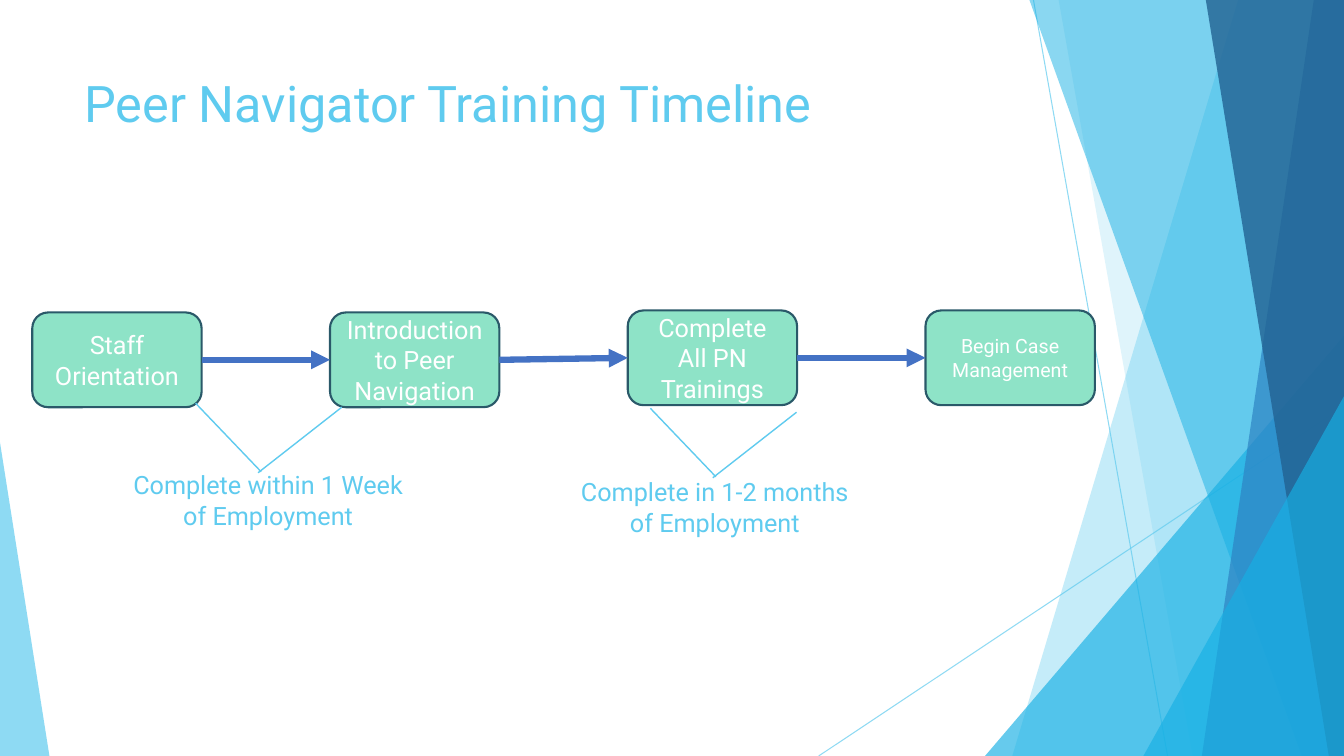
from lxml.etree import SubElement
from pptx import Presentation
from pptx.dml.color import RGBColor
from pptx.enum.shapes import MSO_CONNECTOR, MSO_SHAPE
from pptx.enum.text import MSO_ANCHOR, PP_ALIGN
from pptx.oxml.ns import qn
from pptx.util import Inches, Pt

SKY = RGBColor(0x5F, 0xCB, 0xEF)
CYAN = RGBColor(0x17, 0xB0, 0xE4)
BLUE = RGBColor(0x2E, 0x83, 0xC3)
NAVY = RGBColor(0x22, 0x62, 0x92)
MINT = RGBColor(0x8E, 0xE3, 0xC7)
TEAL = RGBColor(0x2A, 0x59, 0x69)
ROYAL = RGBColor(0x44, 0x72, 0xC4)
WHITE = RGBColor(0xFF, 0xFF, 0xFF)

FONT = "Roboto"
WIDE, HIGH = 13.33, 7.5

TITLE = "Peer Navigator Training Timeline"
STEPS = [
    ("Staff Orientation", 3.1, 18),
    ("Introduction to Peer Navigation", 3.1, 18),
    ("Complete All PN Trainings", 3.08, 18),
    ("Begin Case Management", 3.08, 14),
]
NOTES = [
    ("Complete within 1 Week of Employment", 1.16, 4.61, 1.94, 4.0),
    ("Complete in 1-2 months of Employment", 5.59, 4.68, 6.45, 4.05),
]
RAYS = [(10.25, 0, 11.58, HIGH), (WIDE, 4.03, 8.12, HIGH)]
DECOR = [
    ("band", (12.28, 10.04), SKY, 36),
    ("band", (10.5, 11.83), SKY, 20),
    ("peak", (9.77, 3.33, 3.56, 1), CYAN, 66),
    ("band", (10.21, 12.91), CYAN, 50),
    ("band", (13.03, 11.92), BLUE, 70),
    ("band", (11.96, 13.18), NAVY, 80),
    ("peak", (11.34, 3.93, 1.99, 1), CYAN, 66),
    ("peak", (0, 4.39, 0.49, 0), SKY, 70),
]
BOX_X, BOX_GAP, BOX_W, BOX_H = 0.32, 2.953, 1.68, 0.94

deck = Presentation()
deck.slide_width, deck.slide_height = Inches(WIDE), Inches(HIGH)
shapes = deck.slides.add_slide(deck.slide_layouts[6]).shapes


def fade(fill, alpha):
    color = fill.find(".//" + qn("a:srgbClr"))
    SubElement(color, qn("a:alpha")).set("val", str(alpha * 1000))


def add_line(x1, y1, x2, y2, color, width):
    line = shapes.add_connector(
        MSO_CONNECTOR.STRAIGHT, Inches(x1), Inches(y1), Inches(x2), Inches(y2))
    line.line.color.rgb = color
    line.line.width = Pt(width)
    SubElement(line._element.spPr, qn("a:effectLst"))
    return line


def write(shape, text, size, color, align):
    frame = shape.text_frame
    frame.word_wrap = True
    frame.text = text
    para = frame.paragraphs[0]
    para.alignment = align
    font = para.runs[0].font
    font.name, font.size, font.color.rgb = FONT, Pt(size), color


def add_text(x, y, w, h, text, size, align):
    box = shapes.add_textbox(Inches(x), Inches(y), Inches(w), Inches(h))
    write(box, text, size, SKY, align)


def add_band(top, foot):
    form = shapes.build_freeform(Inches(top), 0)
    form.add_line_segments([
        (Inches(x), Inches(y))
        for x, y in [(WIDE, 0), (WIDE, HIGH), (foot, HIGH)]], close=True)
    return form.convert_to_shape()


def add_peak(x, y, w, tip):
    peak = shapes.add_shape(MSO_SHAPE.ISOSCELES_TRIANGLE,
                            Inches(x), Inches(y), Inches(w), Inches(HIGH - y))
    peak.adjustments[0] = tip
    return peak


def add_decor():
    for ray in RAYS:
        line = add_line(*ray, SKY, 0.75)
        fade(line._element.spPr, 70)
    for kind, place, color, alpha in DECOR:
        part = add_band(*place) if kind == "band" else add_peak(*place)
        part.shadow.inherit = False
        part.fill.solid()
        part.fill.fore_color.rgb = color
        part.line.fill.background()
        fade(part._element.spPr, alpha)


def add_step(x, y, text, size):
    box = shapes.add_shape(MSO_SHAPE.ROUNDED_RECTANGLE,
                           Inches(x), Inches(y), Inches(BOX_W), Inches(BOX_H))
    box.shadow.inherit = False
    box.fill.solid()
    box.fill.fore_color.rgb = MINT
    box.line.color.rgb = TEAL
    box.line.width = Pt(1.5)
    box.text_frame.vertical_anchor = MSO_ANCHOR.MIDDLE
    write(box, text, size, WHITE, PP_ALIGN.CENTER)
    return box


def add_arrow(start, end):
    arrow = add_line(0, 0, 1, 1, ROYAL, 4.5)
    arrow.begin_connect(start, 3)
    arrow.end_connect(end, 1)
    tail = SubElement(arrow.line._get_or_add_ln(), qn("a:tailEnd"))
    tail.set("type", "triangle")


def main():
    add_decor()
    add_text(0.74, 0.67, 9.4, 1.44, TITLE, 36, PP_ALIGN.LEFT)
    boxes = [add_step(BOX_X + i * BOX_GAP, y, text, size)
             for i, (text, y, size) in enumerate(STEPS)]
    for start, end in zip(boxes, boxes[1:]):
        add_arrow(start, end)
    for text, x, y, left, top in NOTES:
        add_line(left, top, left + 0.65, top + 0.68, SKY, 1)
        add_line(left + 0.62, top + 0.69, left + 1.45, top + 0.04, SKY, 1)
        add_text(x, y, 3, 0.71, text, 18, PP_ALIGN.CENTER)
    deck.save("out.pptx")


if __name__ == "__main__":
    main()
